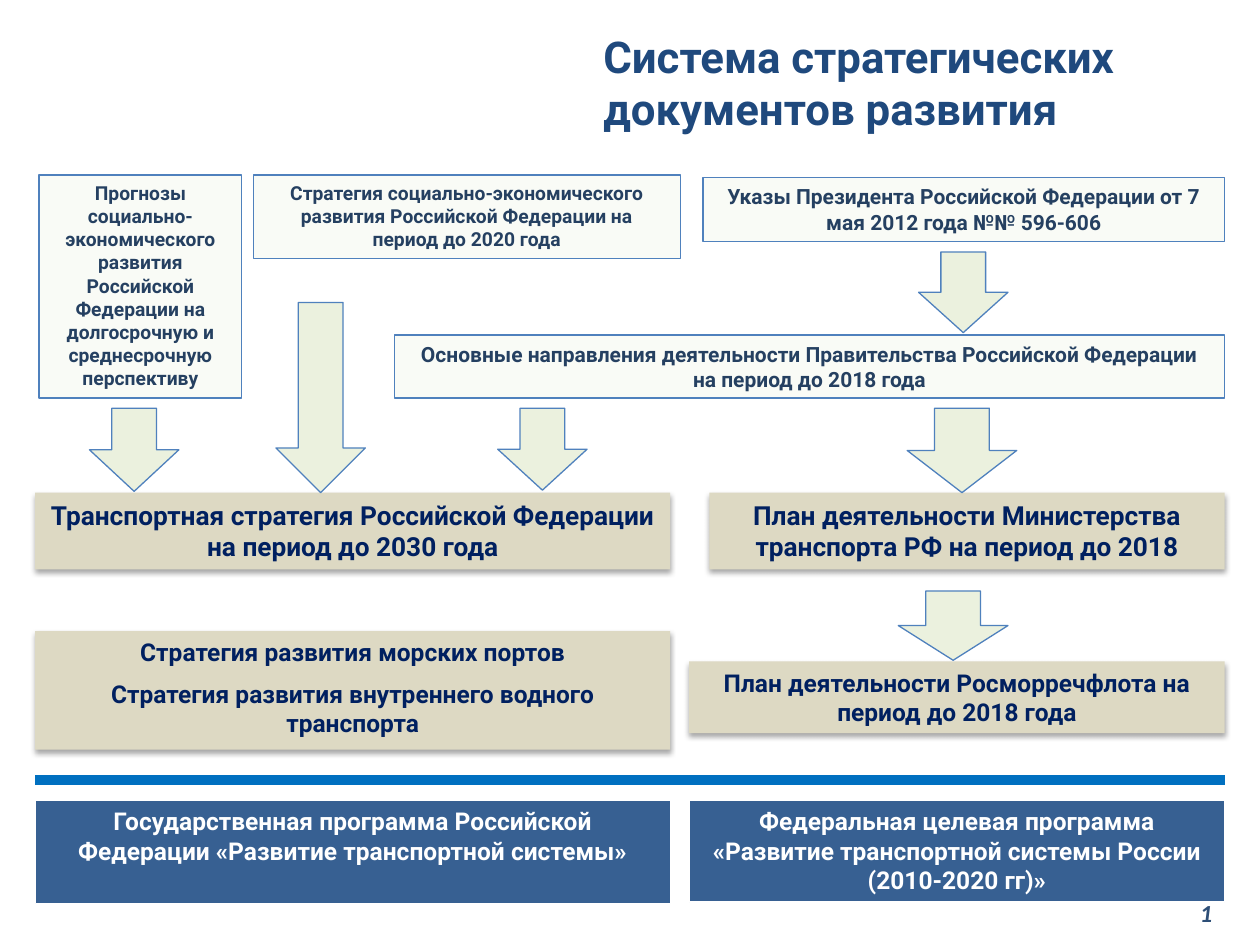
from lxml import etree
from pptx import Presentation
from pptx.dml.color import RGBColor
from pptx.enum import shapes, text
from pptx.oxml import ns
from pptx.util import Inches, Pt

COLORS = {
    "title": "1F497D", "number": "2D4E77", "source": "254061", "plan": "002060",
    "white": "FFFFFF", "mint": "EBF1DE", "sand": "DDD9C3", "navy": "376092",
    "outline": "4F81BD", "divider": "0070C0", "shadow": "000000",
}

# Box styles: fill, opacity in percent, outline, text colour, shadow
STYLES = {
    "source": dict(fill="mint", opacity=26, outline="outline", ink="source", shadow=False),
    "plan": dict(fill="sand", opacity=100, outline=None, ink="plan", shadow=True),
    "program": dict(fill="navy", opacity=100, outline="white", ink="white", shadow=False),
}

TITLE = "Система стратегических документов развития"
LEFT, RIGHT, SPLIT = 0.28, 9.72, 5.32

# Style, left, top, right, height, text size, paragraphs
BOXES = [
    ("source", 0.31, 1.39, 1.92, 1.77, 11,
     ["Прогнозы социально- экономического развития Российской Федерации "
      "на долгосрочную и среднесрочную перспективу"]),
    ("source", 2.01, 1.39, 5.4, 0.66, 11,
     ["Стратегия социально-экономического развития Российской Федерации "
      "на период до 2020 года"]),
    ("source", 5.58, 1.41, RIGHT, 0.51, 12,
     ["Указы Президента Российской Федерации от 7 мая 2012 года №№ 596-606"]),
    ("source", 3.13, 2.66, RIGHT, 0.5, 12,
     ["Основные направления деятельности Правительства Российской Федерации "
      "на период до 2018 года"]),
    ("plan", LEFT, 3.91, SPLIT, 0.61, 15,
     ["Транспортная стратегия Российской Федерации на период до 2030 года"]),
    ("plan", 5.63, 3.91, RIGHT, 0.61, 15,
     ["План деятельности Министерства транспорта РФ на период до 2018"]),
    ("plan", LEFT, 5.01, SPLIT, 0.94, 14,
     ["Стратегия развития морских портов",
      "Стратегия развития внутреннего водного транспорта"]),
    ("plan", 5.47, 5.25, RIGHT, 0.57, 14,
     ["План деятельности Росморречфлота на период до 2018 года"]),
    ("program", LEFT, 6.35, SPLIT, 0.82, 14,
     ["Государственная программа Российской Федерации "
      "«Развитие транспортной системы»"]),
    ("program", 5.47, 6.35, RIGHT, 0.81, 14,
     ["Федеральная целевая программа «Развитие транспортной системы России "
      "(2010-2020 гг)»"]),
]

# Left, top, width, height
ARROWS = [
    (0.71, 3.24, 0.71, 0.66), (2.19, 2.4, 0.71, 1.51), (3.95, 3.24, 0.71, 0.65),
    (7.29, 2, 0.71, 0.64), (7.2, 3.24, 0.87, 0.67), (7.13, 4.69, 0.87, 0.55),
]


def rgb(name):
    return RGBColor.from_string(COLORS[name])


def write(shape, paragraphs, ink, align, anchor, **font):
    frame = shape.text_frame
    frame.word_wrap = True
    frame.vertical_anchor = anchor
    for index, wording in enumerate(paragraphs):
        paragraph = frame.add_paragraph() if index else frame.paragraphs[0]
        paragraph.alignment = align
        paragraph.space_before = Pt(font["size"].pt / 2 if index else 0)
        run = paragraph.add_run()
        run.text = wording
        run.font.color.rgb = rgb(ink)
        for key, value in {"name": "Roboto", "bold": True, **font}.items():
            setattr(run.font, key, value)


def add_shape(slide, kind, place, fill, outline):
    shape = slide.shapes.add_shape(kind, *map(Inches, place))
    shape.shadow.inherit = False
    shape.fill.solid()
    shape.fill.fore_color.rgb = rgb(fill)
    if outline:
        shape.line.color.rgb = rgb(outline)
        shape.line.width = Pt(0.75)
    else:
        shape.line.fill.background()
    return shape


def set_opacity(color, percent):
    etree.SubElement(color, ns.qn("a:alpha"), val=str(percent * 1000))


def add_drop_shadow(shape):
    effects = shape.element.spPr.find(ns.qn("a:effectLst"))
    drop = etree.SubElement(effects, ns.qn("a:outerShdw"), blurRad=str(Pt(3.1)),
                            dist=str(Pt(1.8)), dir="5400000", rotWithShape="0")
    color = etree.SubElement(drop, ns.qn("a:srgbClr"), val=COLORS["shadow"])
    set_opacity(color, 35)


def main():
    deck = Presentation()
    deck.slide_width, deck.slide_height = Inches(10), Inches(7.5)
    slide = deck.slides.add_slide(deck.slide_layouts[6])
    align, anchor = text.PP_ALIGN, text.MSO_ANCHOR

    # Title and slide number
    title = slide.shapes.add_textbox(*map(Inches, (4.69, 0.13, 5.31, 1.04)))
    write(title, [TITLE], "title", align.LEFT, anchor.MIDDLE, size=Pt(25))
    number = slide.shapes.add_textbox(*map(Inches, (7.22, 6.98, 2.5, 0.52)))
    write(number, ["1"], "number", align.RIGHT, anchor.MIDDLE,
          size=Pt(14), name="Calibri", italic=True)

    # Document boxes
    for style_name, left, top, right, height, size, paragraphs in BOXES:
        style = STYLES[style_name]
        box = add_shape(slide, shapes.MSO_SHAPE.RECTANGLE,
                        (left, top, right - left, height), style["fill"], style["outline"])
        if style["opacity"] < 100:
            fill = box.element.spPr.find(ns.qn("a:solidFill"))
            set_opacity(fill[0], style["opacity"])
        if style["shadow"]:
            add_drop_shadow(box)
        write(box, paragraphs, style["ink"], align.CENTER, anchor.TOP, size=Pt(size))

    # Arrows between levels
    for place in ARROWS:
        add_shape(slide, shapes.MSO_SHAPE.DOWN_ARROW, place, "mint", "outline")

    # Divider above the programs
    divider = slide.shapes.add_connector(
        shapes.MSO_CONNECTOR.STRAIGHT, *map(Inches, (LEFT, 6.19, RIGHT, 6.19)))
    divider.line.color.rgb = rgb("divider")
    divider.line.width = Pt(6)
    etree.SubElement(divider.element.spPr, ns.qn("a:effectLst"))

    deck.save("out.pptx")


if __name__ == "__main__":
    main()
